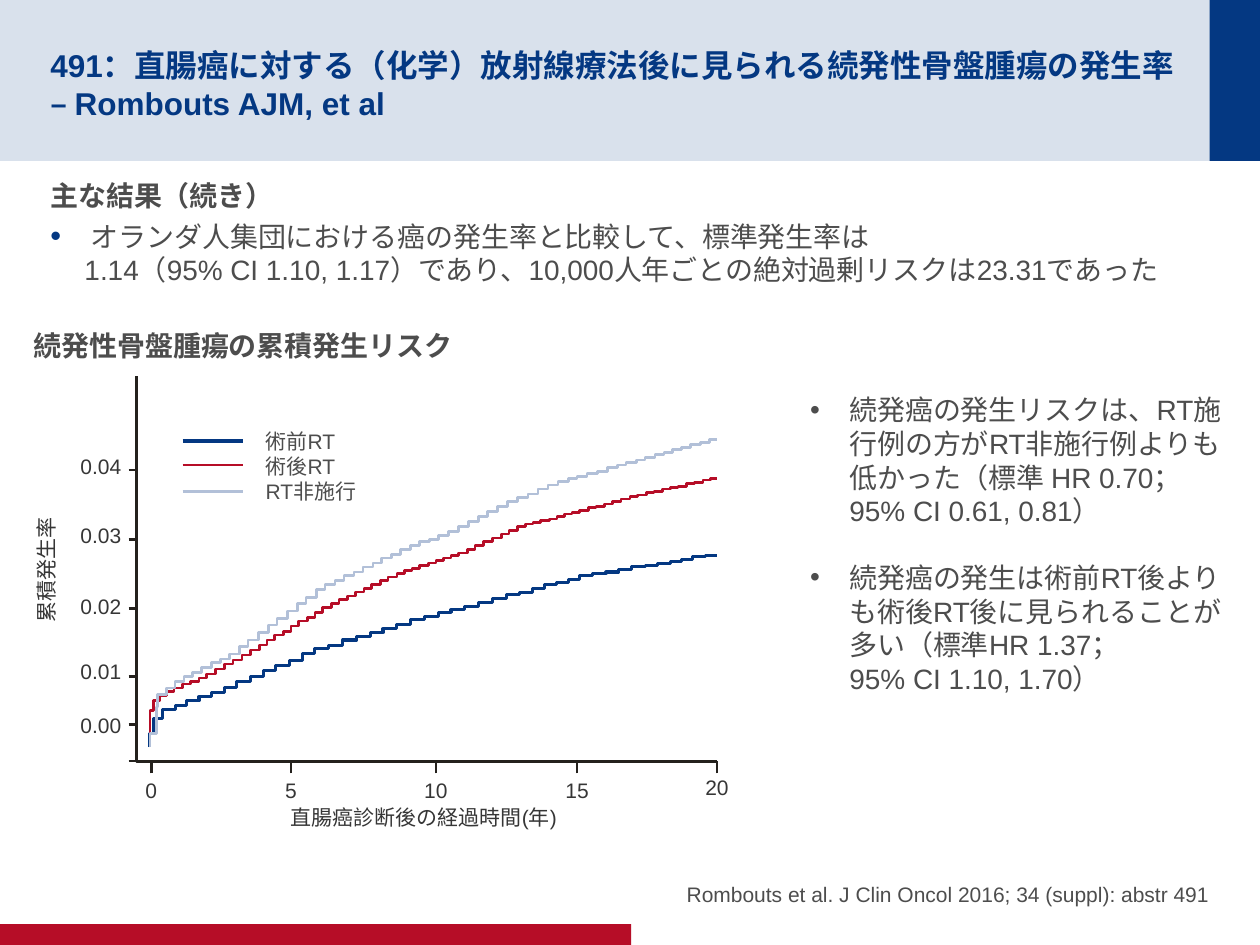
from dataclasses import dataclass
from typing import Any, NamedTuple

from pptx import Presentation
from pptx.dml.color import RGBColor as Rgb
from pptx.enum.shapes import MSO_CONNECTOR as Connector, MSO_SHAPE as Preset
from pptx.enum.text import MSO_ANCHOR as Anchor, PP_ALIGN as Align
from pptx.oxml.ns import qn
from pptx.util import Pt
from lxml.etree import SubElement


@dataclass(frozen=True)
class Theme:
    font: str = "Arial"
    navy: str = "043882"
    red: str = "B60D27"
    pale: str = "B2C0D8"
    text: str = "4D4D4D"
    axis: str = "24211D"
    axis_text: str = "363636"
    title_size: float = 18
    body_size: float = 16
    small_size: float = 12
    axis_width: float = 1.5


THEME = Theme()


class Box(NamedTuple):
    left: float
    top: float
    width: float
    height: float


class Para(NamedTuple):
    text: str
    bold: bool = False
    after: float = 0
    indent: float = 0  # hanging indent; a bullet is set when it is not 0
    bullet_color: str = ""
    bullet_percent: int = 100


class Curve(NamedTuple):
    label: str
    color: str
    width: float
    legend_y: float
    tread: float  # usual length of a step
    bends: list[tuple[int, int]]


class Tick(NamedTuple):
    label: str
    at: float
    label_top: float


# Bends are (x, level) where the slope changes, counted in units of 0.72 pt.
CURVE_UNIT = Pt(0.72)
CURVE_START, CURVE_END_X = (119, 593), 569
CURVES = [
    Curve("術前RT", THEME.navy, 1.75, 252, 10.5, [
        (119, 582), (122, 570), (129, 563), (168, 550), (250, 515), (337, 489), (423, 467),
        (460, 457), (522, 447), (560, 441)]),
    Curve("術後RT", THEME.red, 1.5, 265.7, 6.5, [
        (119, 564), (122, 556), (132, 549), (164, 535), (206, 512), (256, 482), (315, 455),
        (364, 439), (411, 418), (460, 405), (513, 391), (564, 380)]),
    Curve("RT非施行", THEME.pale, 1.5, 280.8, 7.5, [
        (119, 582), (124, 561), (125, 551), (139, 541), (182, 519), (251, 468), (318, 436),
        (356, 422), (403, 398), (443, 382), (505, 365), (563, 349)]),
]

AXIS_X, AXIS_TOP, AXIS_Y, AXIS_RIGHT = 78.5, 215.3, 434.9, 409.7
INCIDENCE_TICKS = [Tick("0.04", 268.6, 255.6), Tick("0.03", 308.2, 295.2), Tick("0.02", 347.8, 335.5),
                   Tick("0.01", 386.6, 373), Tick("0.00", 414, 403.9)]
YEAR_TICKS = [Tick("0", 86.4, 440.6), Tick("5", 166.3, 440.6), Tick("10", 249.1, 440.6),
              Tick("15", 329.8, 440.6), Tick("20", AXIS_RIGHT, 439.2)]


def assign(target: Any, values: dict[str, Any]) -> None:
    for key, value in values.items():
        setattr(target, key, value)


def add_bar(slide: Any, box: Box, color: str, opacity: int = 100) -> None:
    bar = slide.shapes.add_shape(Preset.RECTANGLE, *map(Pt, box))
    bar.shadow.inherit = False
    bar.fill.solid()
    bar.fill.fore_color.rgb = Rgb.from_string(color)
    bar.line.fill.background()
    if opacity < 100:
        tint = bar.fill._xPr.find(".//" + qn("a:srgbClr"))
        SubElement(tint, qn("a:alpha"), val=str(opacity * 1000))


def add_bullet(paragraph: Any, para: Para) -> None:
    props = paragraph._p.get_or_add_pPr()
    props.set("marL", str(Pt(para.indent)))
    props.set("indent", str(-Pt(para.indent)))
    if para.bullet_color:
        SubElement(SubElement(props, qn("a:buClr")), qn("a:srgbClr"), val=para.bullet_color)
    SubElement(props, qn("a:buSzPct"), val=str(para.bullet_percent * 1000))
    SubElement(props, qn("a:buFont"), typeface=THEME.font)
    SubElement(props, qn("a:buChar"), char="•")


def add_text(slide: Any, box: Box, paras: list[Para], size: float, color: str, align: Align = Align.LEFT,
             margins: tuple[float, ...] = (7.2, 3.6, 7.2, 3.6), anchor: Anchor = Anchor.TOP,
             wrap: bool = True, rotation: float = 0) -> None:
    holder = slide.shapes.add_textbox(*map(Pt, box))
    holder.rotation = rotation
    frame = holder.text_frame
    sides = ("margin_left", "margin_top", "margin_right", "margin_bottom")
    assign(frame, {"word_wrap": wrap, "vertical_anchor": anchor, **dict(zip(sides, map(Pt, margins)))})
    for index, para in enumerate(paras):
        paragraph = frame.add_paragraph() if index else frame.paragraphs[0]
        assign(paragraph, {"text": para.text, "alignment": align, "space_after": Pt(para.after)})
        for run in paragraph.runs:
            assign(run.font, {"name": THEME.font, "size": Pt(size), "bold": para.bold})
            run.font.color.rgb = Rgb.from_string(color)
        if para.indent:
            add_bullet(paragraph, para)


def add_line(slide: Any, start: tuple[float, float], end: tuple[float, float], color: str, width: float) -> None:
    line = slide.shapes.add_connector(Connector.STRAIGHT, *map(Pt, start + end))
    line.line.color.rgb = Rgb.from_string(color)
    line.line.width = Pt(width)
    SubElement(line._element.spPr, qn("a:effectLst"))


def add_outline(slide: Any, points: list[tuple[float, float]], unit: int, color: str, width: float) -> None:
    builder = slide.shapes.build_freeform(*points[0], scale=float(unit))
    builder.add_line_segments(points[1:], close=False)
    outline = builder.convert_to_shape()
    outline.shadow.inherit = False
    outline.fill.background()
    outline.line.color.rgb = Rgb.from_string(color)
    outline.line.width = Pt(width)


def step_points(curve: Curve) -> list[tuple[float, float]]:
    """Climb from bend to bend in equal steps of about one tread."""
    points: list[tuple[float, float]] = [CURVE_START]
    for (x0, y0), (x1, y1) in zip([CURVE_START] + curve.bends, curve.bends):
        count = max(1, round((x1 - x0) / curve.tread))
        for step in range(1, count + 1):
            x = x0 + (x1 - x0) * step / count
            level = y0 + (y1 - y0) * step / count
            points += [(x, points[-1][1]), (x, level)]
    return points + [(CURVE_END_X, points[-1][1])]


def add_axes(slide: Any) -> None:
    def label(box: Box, text: str, align: Align = Align.CENTER, rotation: float = 0) -> None:
        add_text(slide, box, [Para(text)], THEME.small_size, THEME.axis_text, align, wrap=False, rotation=rotation)

    stroke = (THEME.axis, THEME.axis_width)
    add_outline(slide, [(AXIS_X, AXIS_TOP), (AXIS_X, AXIS_Y), (AXIS_RIGHT, AXIS_Y)], Pt(1), *stroke)
    for y in [tick.at for tick in INCIDENCE_TICKS] + [AXIS_Y]:
        add_line(slide, (AXIS_X - 5, y), (AXIS_X, y), *stroke)
    for tick in INCIDENCE_TICKS:
        label(Box(38.2, tick.label_top, 38.2, 21.6), tick.label, Align.RIGHT)
    for tick in YEAR_TICKS:
        add_line(slide, (tick.at, AXIS_Y + 7), (tick.at, AXIS_Y), *stroke)
        label(Box(tick.at - 14, tick.label_top, 28, 21.6), tick.label)
    label(Box(-38.2, 314.6, 128.9, 21.6), "累積発生率", rotation=270)
    label(Box(113, 456.5, 258.5, 21.6), "直腸癌診断後の経過時間(年)")


def main() -> None:
    deck = Presentation()
    assign(deck, {"slide_width": Pt(720), "slide_height": Pt(540)})
    slide = deck.slides.add_slide(deck.slide_layouts[6])
    add_bar(slide, Box(0, 0, 720, 92), THEME.navy, opacity=15)
    add_bar(slide, Box(691.2, 0, 28.8, 92), THEME.navy)
    add_bar(slide, Box(0, 528, 360.7, 12), THEME.red)

    title = "491：直腸癌に対する（化学）放射線療法後に見られる続発性骨盤腫瘍の発生率\v– Rombouts AJM, et al"
    add_text(slide, Box(28.8, 14.4, 648.7, 63.4), [Para(title, bold=True)], THEME.title_size, THEME.navy,
             margins=(0, 3.6, 0, 0), anchor=Anchor.MIDDLE)
    add_text(slide, Box(365.8, 480.2, 325.4, 38.2),
             [Para("Rombouts et al. J Clin Oncol 2016; 34 (suppl): abstr 491", after=4)],
             THEME.small_size, THEME.text, Align.RIGHT, (0, 0, 0, 0), Anchor.BOTTOM)
    add_text(slide, Box(28.8, 98.6, 679, 373.7), [
        Para("主な結果（続き）", bold=True, after=4),
        Para(" オランダ人集団における癌の発生率と比較して、標準発生率は\v1.14（95% CI 1.10, 1.17）であり、"
             "10,000人年ごとの絶対過剰リスクは23.31であった", False, 4, 19.5, THEME.navy, 110),
    ], THEME.body_size, THEME.text, margins=(0, 3.6, 0, 3.6))
    add_text(slide, Box(455.8, 221, 252, 181.4), [
        Para("続発癌の発生リスクは、RT施行例の方がRT非施行例よりも低かった（標準 HR 0.70；\v95% CI 0.61, 0.81）",
             after=19, indent=22.5),
        Para("続発癌の発生は術前RT後よりも術後RT後に見られることが多い（標準HR 1.37；\v95% CI 1.10, 1.70）", indent=22.5),
    ], THEME.body_size, THEME.text)
    add_text(slide, Box(12.2, 184.3, 438.5, 26.6), [Para("続発性骨盤腫瘍の累積発生リスク", bold=True)],
             THEME.body_size, THEME.text, wrap=False)

    add_axes(slide)
    for curve in CURVES:
        add_outline(slide, step_points(curve), CURVE_UNIT, curve.color, curve.width)
        add_line(slide, (104.4, curve.legend_y), (139, curve.legend_y), curve.color, curve.width)
    add_text(slide, Box(144.7, 241.2, 111.6, 51.1), [Para(curve.label) for curve in CURVES],
             THEME.small_size, THEME.text, wrap=False)
    deck.save("out.pptx")


if __name__ == "__main__":
    main()
